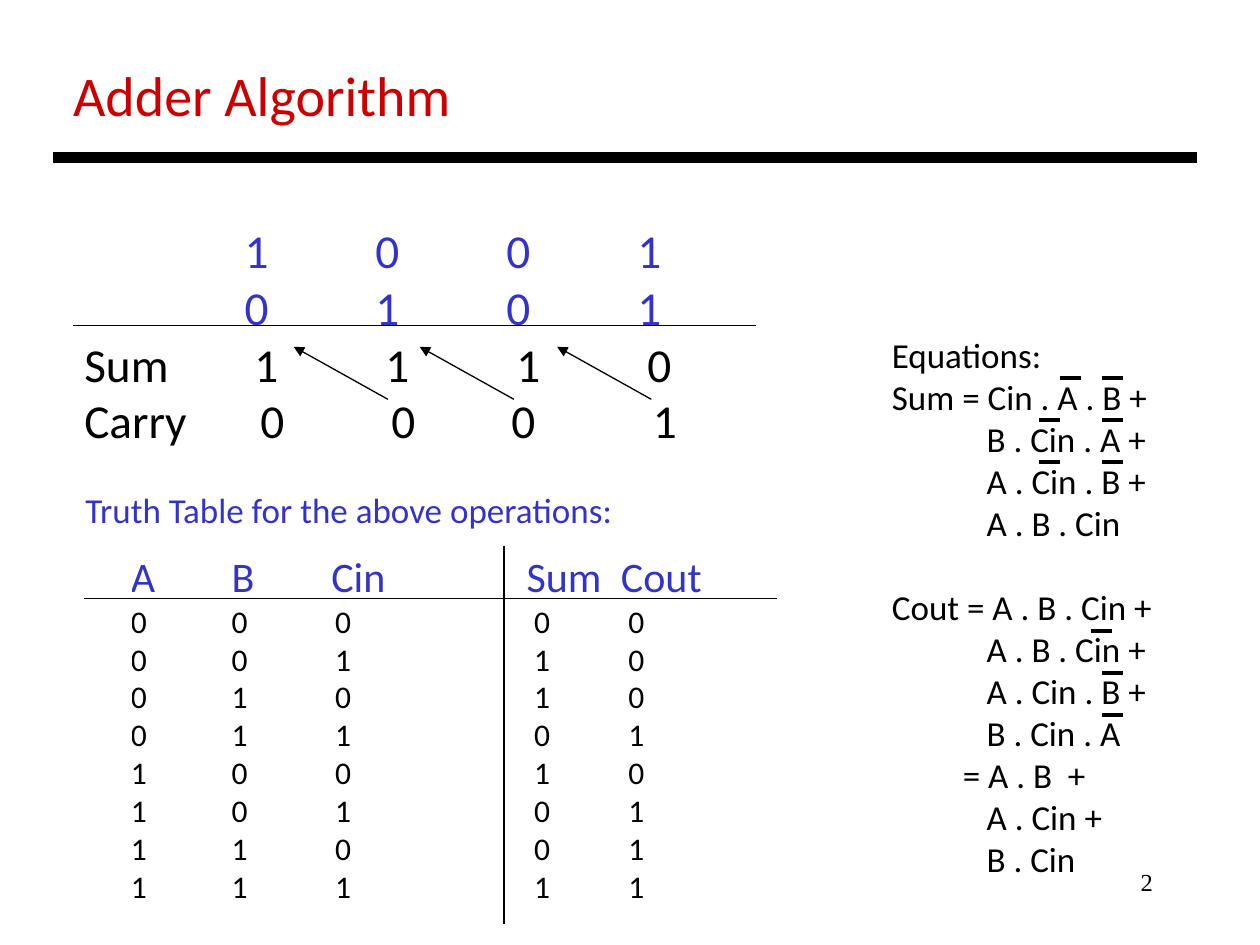
from dataclasses import dataclass
from pptx import Presentation
from pptx.dml.color import RGBColor as RGB
from pptx.enum.shapes import MSO_CONNECTOR as Conn
from pptx.enum.text import MSO_ANCHOR as Anchor, MSO_AUTO_SIZE as Fit, PP_ALIGN as Align
from pptx.oxml.ns import qn
from pptx.util import Cm, Pt
from lxml.etree import SubElement


@dataclass(frozen=True)
class Theme:
    font: str = "Calibri"
    serif: str = "Times New Roman"
    red: RGB = RGB(0xCC, 0, 0)
    blue: RGB = RGB(0x33, 0x33, 0xCC)
    black: RGB = RGB(0, 0, 0)
    title: int = 32
    sum: int = 27
    head: int = 24
    body: int = 20
    cell: int = 18
    page: int = 14


T = Theme()

# Content: label, digits, tab stops in cm, colour
SUMS = [
    ("", "1001", (3.23, 5.87, 8.51, 11.15), T.blue),
    ("", "0101", (3.23, 5.87, 8.51, 11.15), T.blue),
    ("Sum", "1110", (3.43, 6.07, 8.71, 11.35), T.black),
    ("Carry", "0001", (3.55, 6.19, 8.61, 11.46), T.black),
]
HEAD = ["A", "B", "Cin", "Sum", "Cout"]
TRUTH = ["00000", "00110", "01010", "01101", "10010", "10101", "11001", "11111"]
EDGES = [2.64, 4.67, 6.68, 10.62, 12.52, 14.4]
INSET = [0, 0, 0.08, 0.15, 0.15]

# Equations: text, indent in cm, space before in points
TERM = 1.91
EQUATIONS = [
    ("Equations:", 0, 0),
    ("Sum = Cin . A . B +", 0, 0),
    ("B . Cin . A +", TERM, 0),
    ("A . Cin . B +", TERM, 0),
    ("A . B . Cin", TERM, 0),
    ("Cout = A . B . Cin +", 0, 24),
    ("A . B . Cin +", TERM, 0),
    ("A . Cin . B +", TERM, 0),
    ("B . Cin . A", TERM, 0),
    ("= A . B  +", 1.43, 0),
    ("A . Cin +", TERM, 0),
    ("B . Cin", TERM, 0),
]
# Negation bars: line number -> grid columns
BARS = {0: (2, 6), 1: (0, 6), 2: (0, 6), 6: (5,), 7: (6,), 8: (6,)}

deck = Presentation()
deck.slide_width, deck.slide_height = Cm(25.4), Cm(19.05)
slide = deck.slides.add_slide(deck.slide_layouts[5])
shapes = slide.shapes


def write(para, text, size=T.body, color=T.black, font=T.font,
          align=Align.LEFT, indent=0, before=0, tabs=()):
    para.alignment = align
    para.space_before = Pt(before)
    props = para._p.get_or_add_pPr()
    if indent:
        props.set("marL", str(Cm(indent)))
    if tabs:
        stops = SubElement(props, qn("a:tabLst"))
        for x in tabs:
            SubElement(stops, qn("a:tab"), pos=str(Cm(x)), algn="l")
    run = para.add_run()
    run.text = text
    run.font.name, run.font.size = font, Pt(size)
    run.font.bold = False
    run.font.color.rgb = color


def box(x, y, w, h, lines):
    frame = shapes.add_textbox(Cm(x), Cm(y), Cm(w), Cm(h)).text_frame
    frame.word_wrap = True
    for i, (text, form) in enumerate(lines):
        para = frame.add_paragraph() if i else frame.paragraphs[0]
        write(para, text, **form)


def line(x1, y1, x2, y2, width=0.75, arrow=False):
    rule = shapes.add_connector(Conn.STRAIGHT, Cm(x1), Cm(y1), Cm(x2), Cm(y2))
    rule.line.color.rgb = T.black
    rule.line.width = Pt(width)
    if arrow:
        SubElement(rule.line._get_or_add_ln(), qn("a:tailEnd"), type="triangle")
    SubElement(rule._element.spPr, qn("a:effectLst"))


# Title and page number
title = shapes.title
title.left, title.top, title.width, title.height = Cm(1.22), Cm(1.09), Cm(9), Cm(1.63)
frame = title.text_frame
frame.auto_size, frame.vertical_anchor = Fit.NONE, Anchor.TOP
write(frame.paragraphs[0], "Adder Algorithm", size=T.title, color=T.red)
line(1.07, 3.18, 24.13, 3.18, width=6)
box(18.21, 17.35, 5.28, 1.27,
    [("2", dict(size=T.page, font=T.serif, align=Align.RIGHT))])

# Worked addition with carry arrows
box(1.45, 4.34, 13.2, 4.88, [
    ("\t".join([label, *digits]), dict(size=T.sum, color=color, tabs=tabs))
    for label, digits, tabs, color in SUMS])
for x in (13.13, 10.36, 7.82):
    line(x, 8.05, x - 1.9, 6.99, arrow=True)
line(1.47, 6.56, 15.24, 6.56)

# Truth table
box(1.47, 9.73, 11.8, 1.12,
    [("Truth Table for the above operations:", dict(color=T.blue))])
rows = [HEAD, *TRUTH]
table = shapes.add_table(len(rows), len(HEAD), Cm(EDGES[0]), Cm(11.13),
                         Cm(EDGES[-1] - EDGES[0]), Cm(7.11)).table
table.first_row = table.horz_banding = False
for c, (left, right) in enumerate(zip(EDGES, EDGES[1:])):
    table.columns[c].width = Cm(right - left)
for r, row in enumerate(rows):
    table.rows[r].height = Cm(0.76 if r else 1.03)
    look = dict(size=T.cell) if r else dict(size=T.head, color=T.blue)
    for c, text in enumerate(row):
        cell = table.cell(r, c)
        cell.fill.background()
        cell.margin_right = cell.margin_top = cell.margin_bottom = 0
        cell.margin_left = Cm(INSET[c] if r else 0)
        write(cell.text_frame.paragraphs[0], text, **look)
line(1.7, 12.07, 15.67, 12.07)
line(10.16, 11, 10.16, 18.62)

# Equations and negation bars
box(17.73, 6.6, 6.3, 11.38, [
    (text, dict(indent=indent, before=before)) for text, indent, before in EQUATIONS])
for r, cols in BARS.items():
    for c in cols:
        x, y = 20.95 + 0.21 * c, 7.62 + 0.85 * r
        line(x, y, x + 0.42, y, width=2.25)

deck.save("out.pptx")
